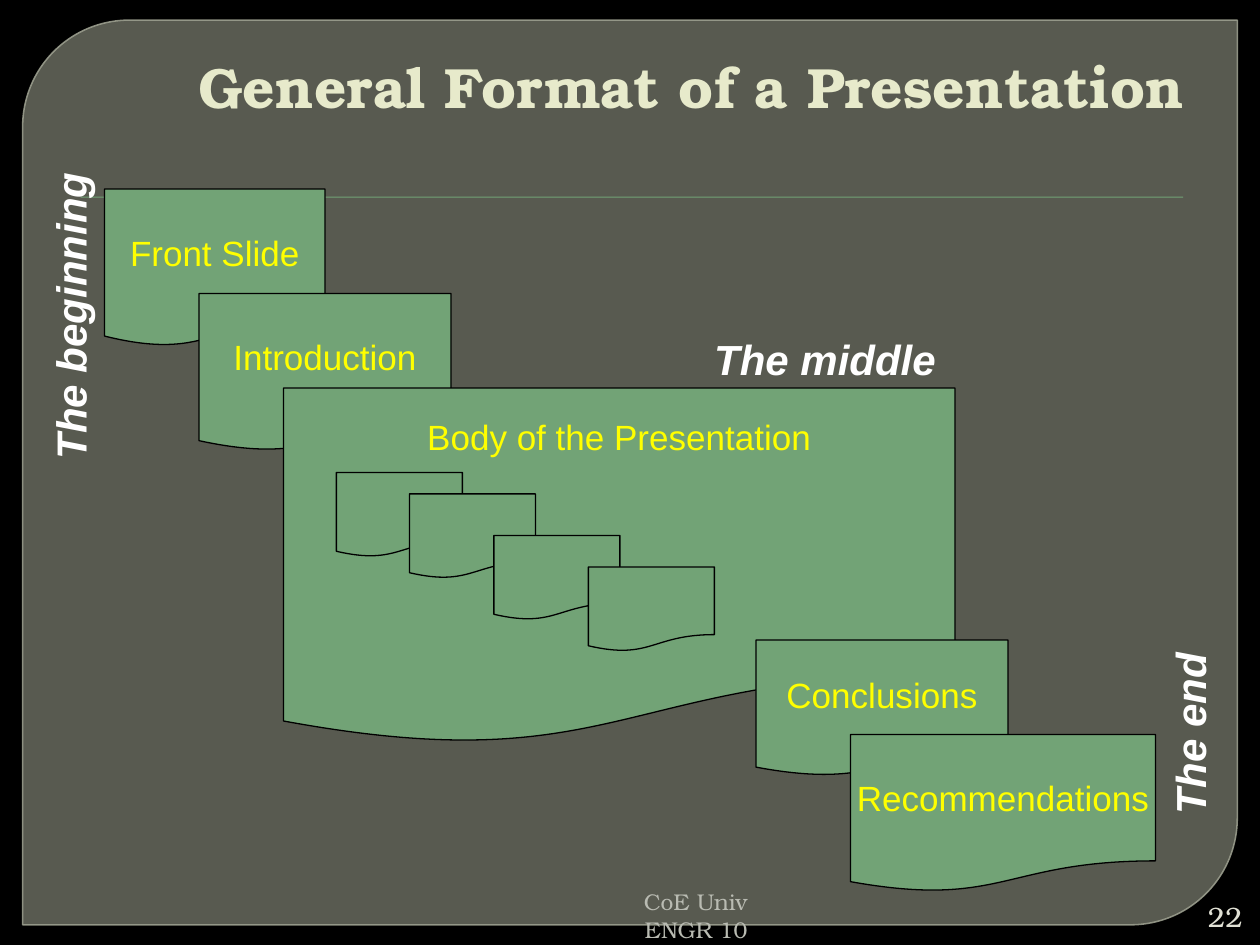
from lxml import etree
from pptx import Presentation
from pptx.dml.color import RGBColor
from pptx.enum.shapes import MSO_SHAPE
from pptx.enum.text import MSO_ANCHOR, PP_ALIGN
from pptx.oxml.ns import qn
from pptx.util import Inches, Pt

DOCUMENT = MSO_SHAPE.FLOWCHART_DOCUMENT
PANEL = MSO_SHAPE.ROUND_2_DIAG_RECTANGLE
RECTANGLE = MSO_SHAPE.RECTANGLE
TOP, MIDDLE, BOTTOM = MSO_ANCHOR.TOP, MSO_ANCHOR.MIDDLE, MSO_ANCHOR.BOTTOM
LEFT, CENTER, RIGHT = PP_ALIGN.LEFT, PP_ALIGN.CENTER, PP_ALIGN.RIGHT

BLACK = RGBColor(0x00, 0x00, 0x00)
WHITE = RGBColor(0xFF, 0xFF, 0xFF)
YELLOW = RGBColor(0xFF, 0xFF, 0x00)
GREEN = RGBColor(0x72, 0xA3, 0x76)
OLIVE = RGBColor(0x88, 0x8B, 0x7B)
PANEL_EDGE = RGBColor(0x9D, 0xA0, 0x90)
CREAM = RGBColor(0xE7, 0xEA, 0xCB)
FOOTER_GRAY = RGBColor(0xB9, 0xBB, 0xB2)
NUMBER_GRAY = RGBColor(0xE0, 0xE0, 0xD4)

SANS = "Arial"
SERIF = "TeX Gyre Bonum"

SECTIONS = [
    ("Front Slide", 0.83, 1.5, 1.75, 1.25),
    ("Introduction", 1.58, 2.33, 2, 1.25),
    ("Body of the Presentation", 2.25, 3.08, 5.33, 2.83),
    ("Conclusions", 6, 5.08, 2, 1.08),
    ("Recommendations", 6.75, 5.83, 2.42, 1.25),
]
BODY_PAGES = [(2.67, 3.75), (3.25, 3.92), (3.92, 4.25), (4.67, 4.5)]


def set_opacity(fill_parent, percent):
    color = fill_parent.find(qn("a:solidFill")).find(qn("a:srgbClr"))
    etree.SubElement(color, qn("a:alpha")).set("val", str(percent * 1000))


def write(frame, text, size, font, color, align, bold=False, italic=False):
    frame.text = text
    for para in frame.paragraphs:
        para.alignment = align
        for span in para.runs:
            span.font.size = Pt(size)
            span.font.name = font
            span.font.color.rgb = color
            span.font.bold = bold
            span.font.italic = italic


def add_filled(shapes, kind, left, top, width, height, color):
    shape = shapes.add_shape(
        kind, Inches(left), Inches(top), Inches(width), Inches(height))
    shape.shadow.inherit = False
    shape.fill.solid()
    shape.fill.fore_color.rgb = color
    shape.line.fill.background()
    return shape


def add_background(page):
    page.background.fill.solid()
    page.background.fill.fore_color.rgb = BLACK
    panel = add_filled(page.shapes, PANEL, 0.18, 0.16, 9.64, 7.18, OLIVE)
    panel.adjustments[0] = 0.118
    panel.adjustments[1] = 0
    panel.line.color.rgb = PANEL_EDGE
    panel.line.width = Pt(0.87)
    properties = panel._element.spPr
    set_opacity(properties, 65)
    set_opacity(properties.find(qn("a:ln")), 88)
    add_filled(page.shapes, RECTANGLE, 0.64, 1.56, 8.75, 0.01, GREEN)


def add_title(page, text):
    title = page.shapes.title
    title.left, title.top = Inches(0.92), Inches(0.47)
    title.width, title.height = Inches(8.58), Inches(0.53)
    title.text_frame.vertical_anchor = BOTTOM
    write(title.text_frame, text, 32.4, SERIF, CREAM, RIGHT, bold=True)
    page.shapes._spTree.append(title._element)


def add_document(shapes, left, top, width, height):
    document = add_filled(shapes, DOCUMENT, left, top, width, height, GREEN)
    document.line.color.rgb = BLACK
    document.line.width = Pt(0.75)
    return document


def add_section(page, name, left, top, width, height):
    section = add_document(page.shapes, left, top, width, height)
    frame = section.text_frame
    frame.word_wrap = False
    frame.vertical_anchor = MIDDLE
    write(frame, name, 20, SANS, YELLOW, CENTER)
    return section


def add_text(page, left, top, width, height):
    box = page.shapes.add_textbox(
        Inches(left), Inches(top), Inches(width), Inches(height))
    box.text_frame.word_wrap = True
    return box


def add_part_label(page, text, left, top, width, rotation=0):
    box = add_text(page, left, top, width, 0.5)
    box.rotation = rotation
    write(box.text_frame, text, 24, SANS, WHITE, LEFT, bold=True, italic=True)


def main():
    deck = Presentation()
    deck.slide_width, deck.slide_height = Inches(10), Inches(7.5)
    page = deck.slides.add_slide(deck.slide_layouts[5])

    add_background(page)
    add_title(page, "General Format of a Presentation")

    footer = add_text(page, 1.42, 7, 4.61, 0.3)
    write(footer.text_frame, "CoE Univ\nENGR 10", 13, SERIF, FOOTER_GRAY, RIGHT)
    number = add_text(page, 9.45, 7.12, 0.51, 0.3)
    number.text_frame.vertical_anchor = MIDDLE
    write(number.text_frame, "22", 16, SERIF, NUMBER_GRAY, RIGHT)

    sections = {name: add_section(page, name, *place) for name, *place in SECTIONS}
    body_frame = sections["Body of the Presentation"].text_frame
    body_frame.vertical_anchor = TOP
    body_frame.margin_top = Inches(0.22)

    add_part_label(page, "The beginning", -0.78, 2.16, 2.67, 270)
    add_part_label(page, "The end", 8.7, 5.57, 1.48, 270)
    add_part_label(page, "The middle", 5.57, 2.6, 2.07)

    body_pages = page.shapes.add_group_shape()
    for left, top in BODY_PAGES:
        add_document(body_pages.shapes, left, top, 1, 0.67)

    deck.save("out.pptx")


if __name__ == "__main__":
    main()
